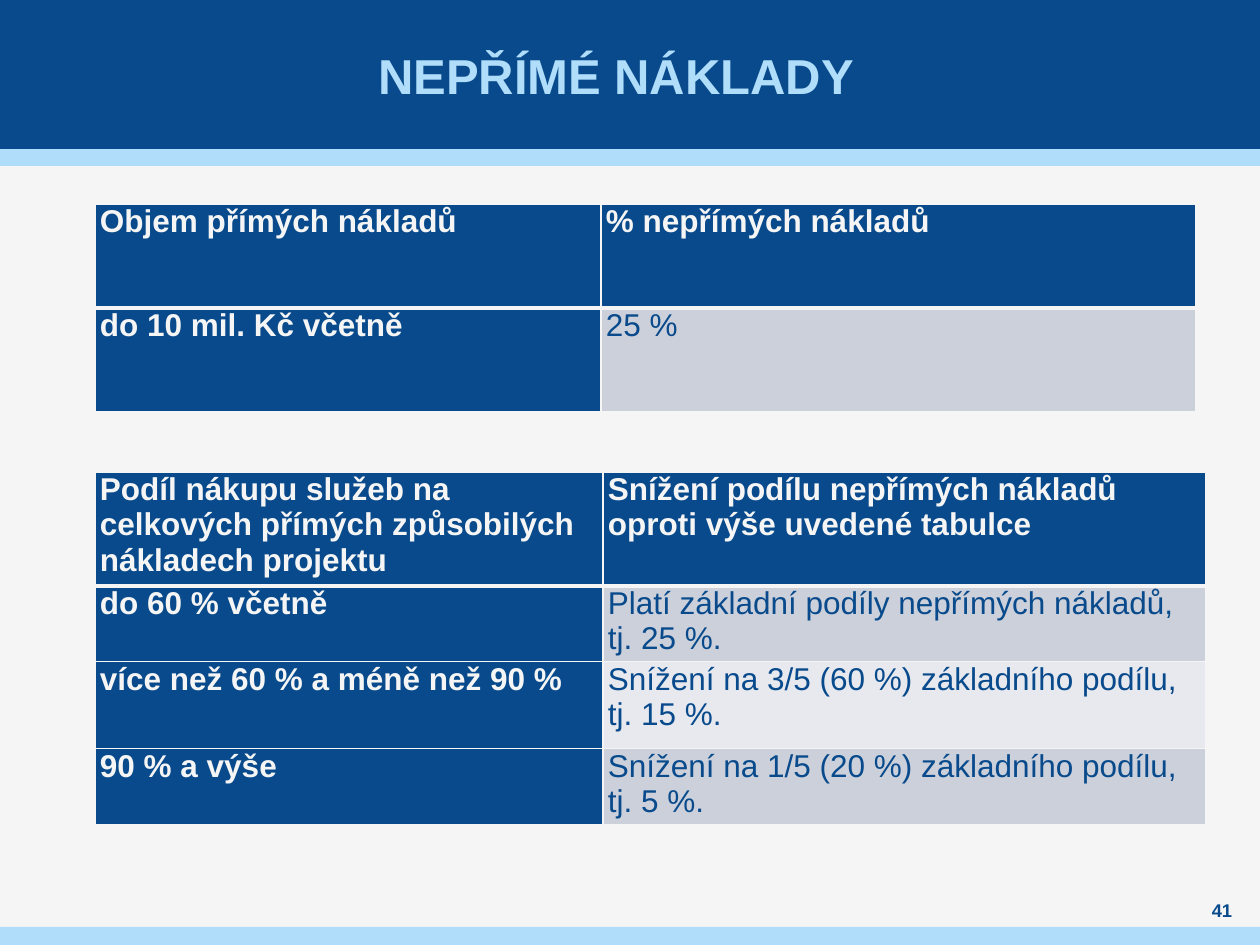
"""Build the slide on indirect costs with two rate tables."""
import pptx
import pptx.dml.color
import pptx.enum.shapes
import pptx.enum.text
import pptx.oxml
import pptx.oxml.ns
import pptx.util

NAVY = pptx.dml.color.RGBColor(0x08, 0x4A, 0x8B)
SKY = pptx.dml.color.RGBColor(0xAF, 0xDD, 0xFA)
PAPER = pptx.dml.color.RGBColor(0xF5, 0xF5, 0xF5)
BAND_DARK = pptx.dml.color.RGBColor(0xCC, 0xD0, 0xDA)
BAND_LIGHT = pptx.dml.color.RGBColor(0xE7, 0xE9, 0xEE)

PX_PER_INCH = 126
SLIDE_WIDTH, SLIDE_HEIGHT = 1260, 945
CELL_INDENT = 5

RATE_ROWS = [
    ("Objem přímých nákladů", "% nepřímých nákladů"),
    ("do 10 mil. Kč včetně", "25 %"),
]
REDUCTION_ROWS = [
    ("Podíl nákupu služeb na celkových přímých způsobilých nákladech projektu",
     "Snížení podílu nepřímých nákladů oproti výše uvedené tabulce"),
    ("do 60 % včetně", "Platí základní podíly nepřímých nákladů, tj. 25 %."),
    ("více než 60 % a méně než 90 %",
     "Snížení na 3/5 (60 %) základního podílu, tj. 15 %."),
    ("90 % a výše", "Snížení na 1/5 (20 %) základního podílu, tj. 5 %."),
]


def px(length):
    """Turn pixels into EMU."""
    return pptx.util.Emu(round(length * 914400 / PX_PER_INCH))


def write_text(frame, text, *, size, color, bold=True, align=None):
    """Put one formatted paragraph into a text frame."""
    frame.word_wrap = True
    paragraph = frame.paragraphs[0]
    paragraph.alignment = align
    run = paragraph.add_run()
    run.text = text
    run.font.name = "Arial"
    run.font.size = pptx.util.Pt(size)
    run.font.bold = bold
    run.font.color.rgb = color


def add_band(slide, top, height, color):
    """Add a full-width band."""
    shape = slide.shapes.add_shape(
        pptx.enum.shapes.MSO_SHAPE.RECTANGLE,
        0, px(top), px(SLIDE_WIDTH), px(height))
    shape.shadow.inherit = False
    shape.fill.solid()
    shape.fill.fore_color.rgb = color
    shape.line.fill.background()


def add_label(slide, box, text, size, color):
    """Add a centred bold text box."""
    frame = slide.shapes.add_textbox(*map(px, box)).text_frame
    frame.margin_left = frame.margin_right = 0
    frame.margin_top = frame.margin_bottom = 0
    frame.vertical_anchor = pptx.enum.text.MSO_ANCHOR.MIDDLE
    write_text(frame, text, size=size, color=color,
               align=pptx.enum.text.PP_ALIGN.CENTER)


def set_borders(cell, top, bottom):
    """Draw the four cell borders, with top and bottom widths in points."""
    properties = cell._tc.get_or_add_tcPr()
    for side, width in (("L", 1), ("R", 1), ("T", top), ("B", bottom)):
        properties.append(pptx.oxml.parse_xml(
            f'<a:ln{side} {pptx.oxml.ns.nsdecls("a")} w="{pptx.util.Pt(width)}">'
            f'<a:solidFill><a:srgbClr val="{PAPER}"/></a:solidFill></a:ln{side}>'))


def add_rate_table(slide, left, top, widths, heights, rows):
    """Add a table with a navy header row and a navy first column."""
    table = slide.shapes.add_table(
        len(rows), len(widths), px(left), px(top),
        px(sum(widths)), px(sum(heights))).table
    for column, width in zip(table.columns, widths):
        column.width = px(width)
    for row, height in zip(table.rows, heights):
        row.height = px(height)
    for row_index, texts in enumerate(rows):
        for column_index, text in enumerate(texts):
            cell = table.cell(row_index, column_index)
            heading = row_index == 0 or column_index == 0
            band = BAND_DARK if row_index % 2 else BAND_LIGHT
            set_borders(cell, top=3 if row_index == 1 else 1,
                        bottom=3 if row_index == 0 else 1)
            cell.fill.solid()
            cell.fill.fore_color.rgb = NAVY if heading else band
            cell.margin_left = px(CELL_INDENT)
            cell.margin_right = cell.margin_top = cell.margin_bottom = 0
            write_text(cell.text_frame, text, size=18, bold=heading,
                       color=PAPER if heading else NAVY)


def main():
    """Build and save the slide."""
    presentation = pptx.Presentation()
    presentation.slide_width = px(SLIDE_WIDTH)
    presentation.slide_height = px(SLIDE_HEIGHT)
    slide = presentation.slides.add_slide(presentation.slide_layouts[6])
    slide.background.fill.solid()
    slide.background.fill.fore_color.rgb = PAPER

    add_band(slide, 149, 17, SKY)
    add_band(slide, 0, 149, NAVY)
    add_band(slide, 927, 18, SKY)
    add_label(slide, (36, 0, 1160, 149), "NEPŘÍMÉ NÁKLADY", 28, SKY)
    add_rate_table(slide, 95, 204, (506, 595), (104, 104), RATE_ROWS)
    add_label(slide, (1190, 898, 64, 25), "41", 10.5, NAVY)
    add_rate_table(slide, 95, 472, (508, 603), (114, 70, 87, 70), REDUCTION_ROWS)
    presentation.save("out.pptx")


if __name__ == "__main__":
    main()
